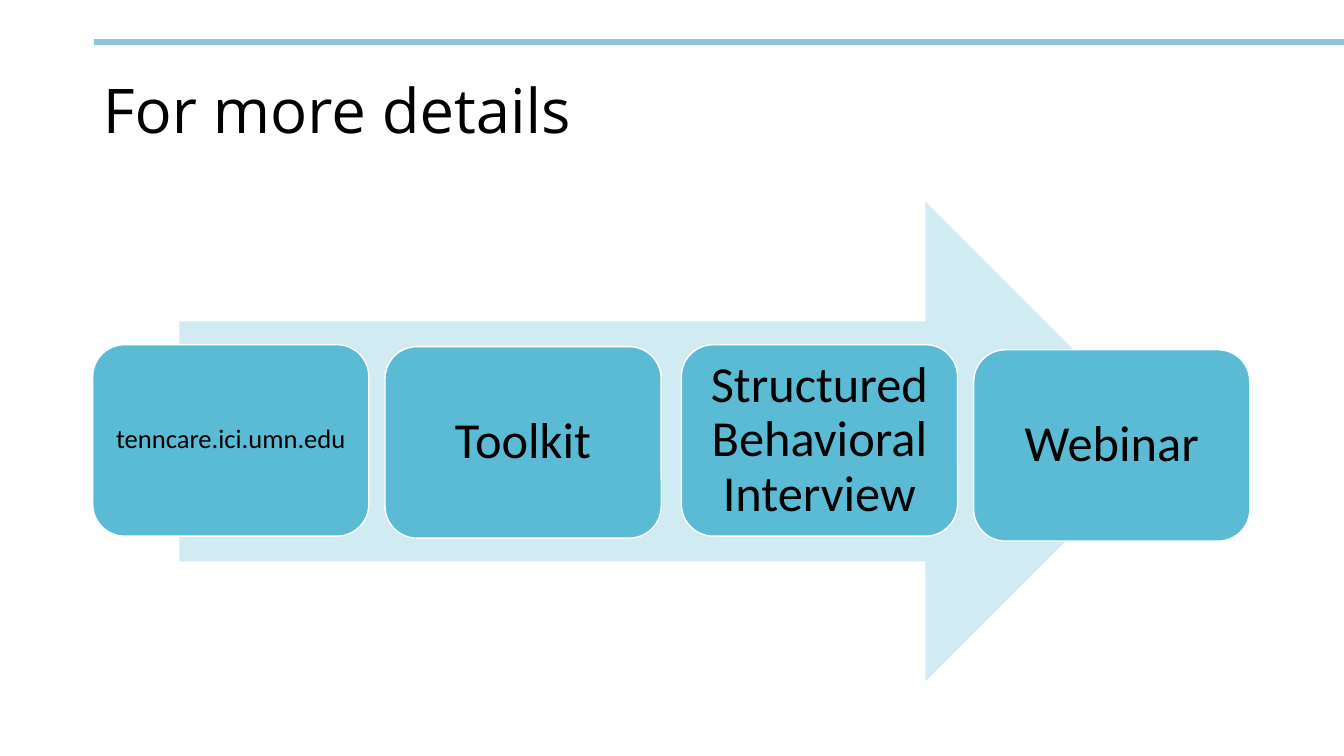
"""Build the "For more details" slide."""
import dataclasses

import pptx
import pptx.dml.color
import pptx.enum.shapes
import pptx.enum.text
import pptx.util

SHAPES = pptx.enum.shapes.MSO_SHAPE
ALIGN = pptx.enum.text.PP_ALIGN


@dataclasses.dataclass(frozen=True)
class Theme:
    """Colours, fonts and type sizes of the slide."""
    rule: str = "8EC7D7"
    arrow: str = "D0EBF2"
    card: str = "5BBBD5"
    outline: str = "FFFFFF"
    ink: str = "000000"
    title_font: str = "Open Sans"
    body_font: str = "Calibri"
    title_size: int = 44
    card_size: int = 36
    address_size: int = 19


def colour(value):
    """Turn a hex value into a colour."""
    return pptx.dml.color.RGBColor.from_string(value)


def write(box, text, *, font, size, ink, align=ALIGN.LEFT, inset=0.1):
    """Set formatted, vertically centred text in a box."""
    frame = box.text_frame
    frame.word_wrap = True
    frame.auto_size = pptx.enum.text.MSO_AUTO_SIZE.NONE
    frame.vertical_anchor = pptx.enum.text.MSO_ANCHOR.MIDDLE
    frame.margin_left = frame.margin_right = pptx.util.Inches(inset)
    frame.margin_top = frame.margin_bottom = pptx.util.Inches(inset)
    para = frame.paragraphs[0]
    para.alignment = align
    para.line_spacing = 0.9
    span = para.add_run()
    span.text = text
    span.font.name = font
    span.font.size = pptx.util.Pt(size)
    span.font.color.rgb = colour(ink)


class Page:
    """A slide on a grid of 40 columns, with its theme."""

    def __init__(self, deck, theme):
        """Add a title-only slide to the deck."""
        self.theme = theme
        self.unit = deck.slide_width / 40
        self.slide = deck.slides.add_slide(deck.slide_layouts[5])

    def place(self, *cells):
        """Convert columns and rows to slide lengths."""
        return [round(cell * self.unit) for cell in cells]

    def title(self, text, *cells):
        """Move and fill the title placeholder."""
        box = self.slide.shapes.title
        box.left, box.top, box.width, box.height = self.place(*cells)
        write(box, text, font=self.theme.title_font,
              size=self.theme.title_size, ink=self.theme.ink)

    def shape(self, kind, fill, *cells, outline=None):
        """Add a flat shape with an optional outline."""
        box = self.slide.shapes.add_shape(kind, *self.place(*cells))
        box.shadow.inherit = False
        box.fill.solid()
        box.fill.fore_color.rgb = colour(fill)
        if outline:
            box.line.color.rgb = colour(outline)
            box.line.width = pptx.util.Pt(1)
        else:
            box.line.fill.background()
        return box

    def card(self, text, left, top, size, inset):
        """Add a rounded card with a centred label."""
        box = self.shape(SHAPES.ROUNDED_RECTANGLE, self.theme.card,
                         left, top, 8.22, 5.7, outline=self.theme.outline)
        write(box, text, font=self.theme.body_font, size=size,
              ink=self.theme.ink, align=ALIGN.CENTER, inset=inset)


def main():
    """Build and save the deck."""
    theme = Theme()
    deck = pptx.Presentation()
    deck.slide_width = pptx.util.Inches(13.33)
    deck.slide_height = pptx.util.Inches(7.5)
    page = Page(deck, theme)
    page.shape(SHAPES.RECTANGLE, theme.rule, 2.79, 1.17, 37.21, 0.18)
    page.title("For more details", 2.76, 1.2, 34.5, 4.35)
    page.shape(SHAPES.RIGHT_ARROW, theme.arrow, 5.34, 6, 29.34, 14.28)
    cards = [
        ("tenncare.ici.umn.edu", 2.76, 10.26, theme.address_size, 0.08),
        ("Toolkit", 11.46, 10.32, theme.card_size, 0.15),
        ("Structured Behavioral Interview", 20.28, 10.26, theme.card_size, 0.15),
        ("Webinar", 28.98, 10.41, theme.card_size, 0.15),
    ]
    for card in cards:
        page.card(*card)
    deck.save("out.pptx")


if __name__ == "__main__":
    main()
